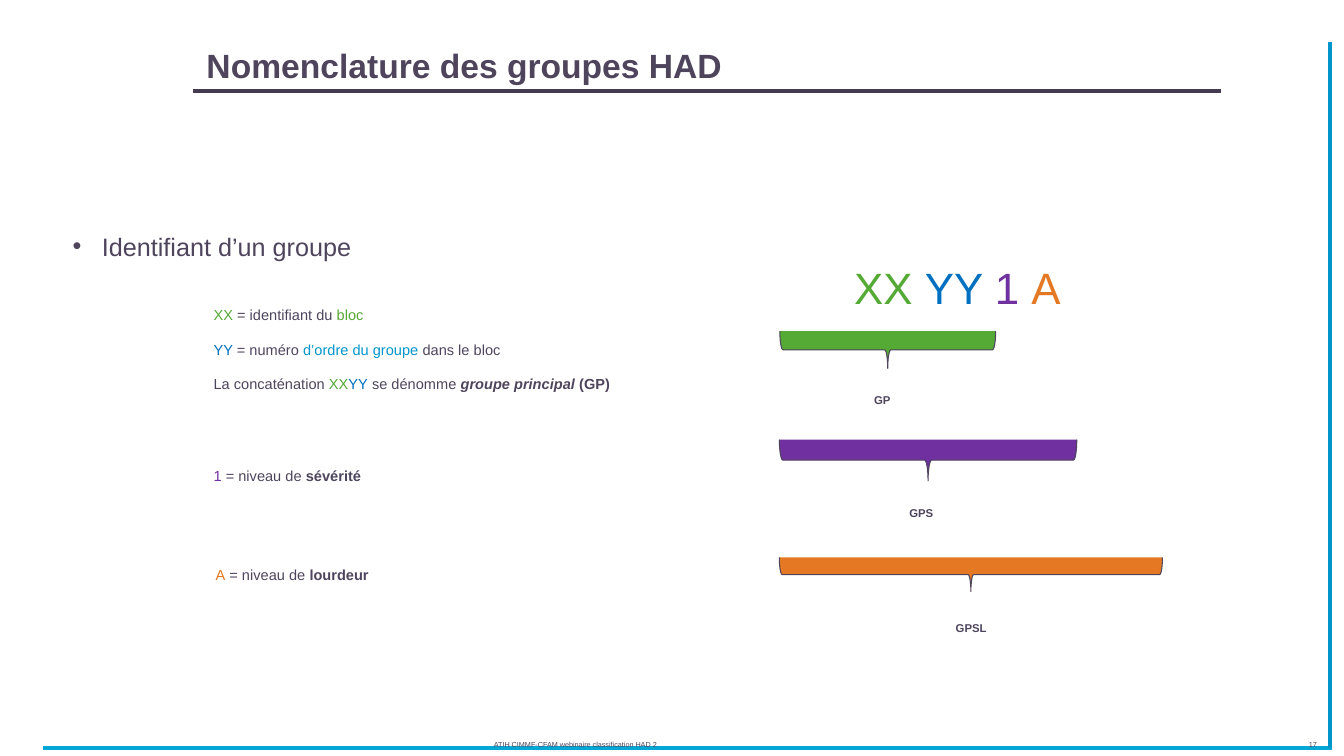
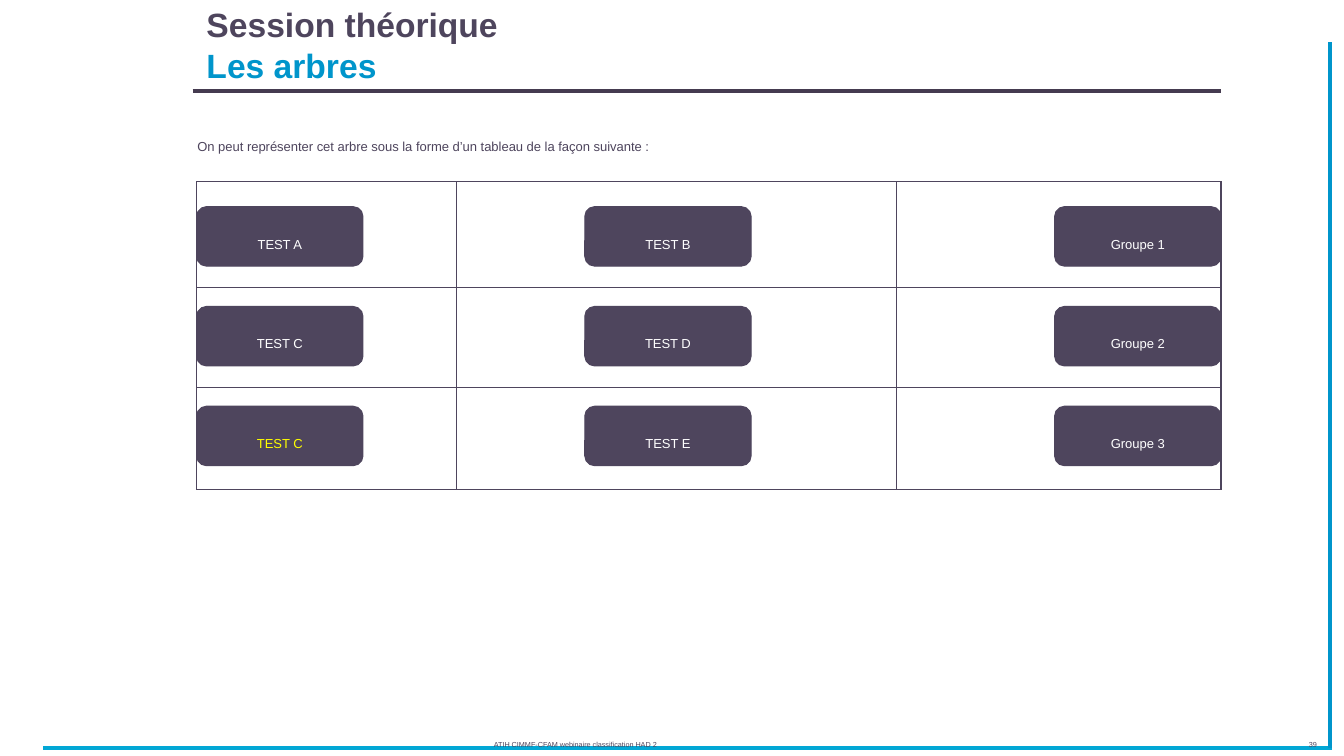
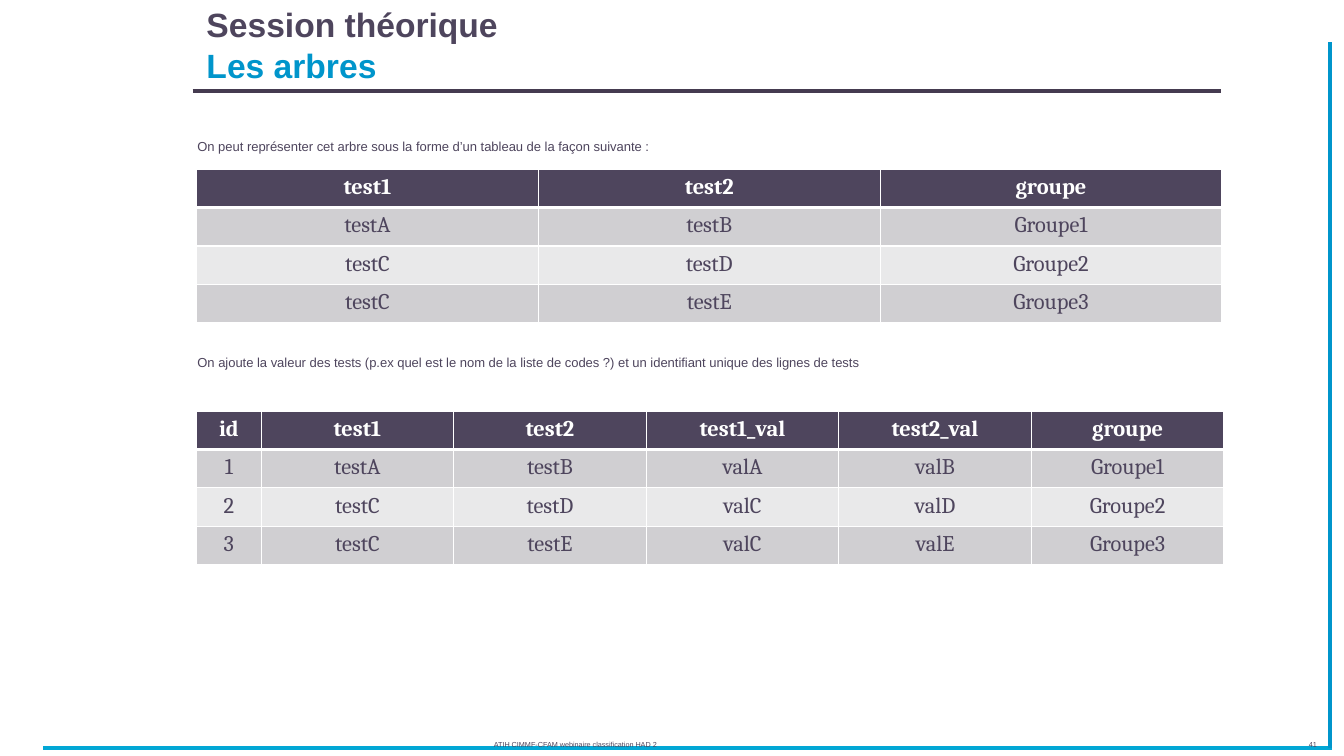
import pptx
import pptx.util
import pptx.dml.color
import pptx.enum.shapes
import pptx.enum.text
import pptx.oxml
import pptx.oxml.ns
import lxml.etree

Inches = pptx.util.Inches
Pt = pptx.util.Pt
RGB = pptx.dml.color.RGBColor.from_string
SHAPE = pptx.enum.shapes.MSO_SHAPE
ALIGN = pptx.enum.text.PP_ALIGN
ANCHOR = pptx.enum.text.MSO_ANCHOR
qn = pptx.oxml.ns.qn

COLORS = {
    "ink": "4E455D", "rule": "453B50", "sky": "02A7D5", "blue": "0095CB",
    "navy": "0070C0", "green": "55A935", "plum": "7030A0", "orange": "E47823",
    "white": "FFFFFF", "yellow": "FFFF00", "dark": "D0CFD2", "pale": "E9E9EA",
}


def write(frame, lines, size, face="Arial", low=True, align=ALIGN.LEFT,
          anchor=ANCHOR.TOP, inset=None, wrap=True):
    """Fill a frame with lines of (text, color, styles) runs; low sets subscript."""
    frame.word_wrap = wrap
    frame.vertical_anchor = anchor
    if inset is not None:
        for side in ("left", "top", "right", "bottom"):
            setattr(frame, "margin_" + side, Inches(inset))
    for i, runs in enumerate(lines):
        para = frame.paragraphs[0] if i == 0 else frame.add_paragraph()
        para.alignment = align
        for text, color, *styles in runs:
            run = para.add_run()
            run.text = text.rstrip("\n")
            form = {"name": face, "size": Pt(size), "bold": "bold" in styles,
                    "italic": "italic" in styles}
            for key, value in form.items():
                setattr(run.font, key, value)
            run.font.color.rgb = RGB(COLORS[color])
            if low:
                run.font._element.set("baseline", "-25000")
            if text.endswith("\n"):
                para.add_line_break()


def rule(slide, x1, y1, x2, y2, color="ink", width=0.75):
    line = slide.shapes.add_connector(
        pptx.enum.shapes.MSO_CONNECTOR.STRAIGHT,
        Inches(x1), Inches(y1), Inches(x2), Inches(y2))
    line.line.color.rgb = RGB(COLORS[color])
    line.line.width = Pt(width)
    lxml.etree.SubElement(line._element.spPr, qn("a:effectLst"))


deck = pptx.Presentation()
deck.slide_width, deck.slide_height = Inches(13.33), Inches(7.5)

# Shared frame: rules, title, footer and page number
tree = [("Session théorique\n", "ink", "bold"), ("Les arbres", "blue", "bold")]
pages = [
    ("17", [("Nomenclature des groupes HAD", "ink", "bold")]),
    ("39", tree),
    ("41", tree),
]
slides = []
for number, title in pages:
    slide = deck.slides.add_slide(deck.slide_layouts[6])
    slides.append(slide)
    rule(slide, 1.91, 0.9, 12.11, 0.9, "rule", 3.06)
    rule(slide, 0.43, 7.42, 13.21, 7.42, "sky", 3.06)
    rule(slide, 13.19, 7.42, 13.19, 0.42, "blue", 3.06)
    box = slide.shapes.add_textbox(Inches(1.95), Inches(0.08), Inches(10.17), Inches(0.81))
    write(box.text_frame, [title], 24, low=False, anchor=ANCHOR.BOTTOM)
    box = slide.shapes.add_textbox(Inches(4.8), Inches(7.21), Inches(5.31), Inches(0.2))
    write(box.text_frame, [[("ATIH CIMMF-CFAM webinaire classification HAD 2", "ink")]], 9)
    box = slide.shapes.add_textbox(Inches(12.38), Inches(7.21), Inches(0.78), Inches(0.19))
    write(box.text_frame, [[(number, "ink")]], 9, align=ALIGN.RIGHT)
names, grid, tables = slides

# Slide 1: parts of a group name
box = names.shapes.add_textbox(Inches(0.48), Inches(2.25), Inches(7), Inches(0.57))
props = box.text_frame.paragraphs[0]._p.get_or_add_pPr()
props.set("marL", str(Inches(0.49)))
props.set("indent", str(Inches(-0.29)))
lxml.etree.SubElement(props, qn("a:buFont")).set("typeface", "Arial")
lxml.etree.SubElement(props, qn("a:buChar")).set("char", "•")
write(box.text_frame, [[("Identifiant d’un groupe", "ink")]], 18, low=False, inset=0.04)

box = names.shapes.add_textbox(Inches(7.74), Inches(2.08), Inches(3.51), Inches(0.91))
code = [("XX ", "green"), ("YY ", "navy"), ("1 ", "plum"), ("A", "orange")]
write(box.text_frame, [code], 54, align=ALIGN.CENTER, inset=0, wrap=False)

notes = [
    (2.02, 2.82, 4.97, 0.81, [
        [("XX ", "green"), ("= identifiant du ", "ink"), ("bloc", "green")],
        [("YY ", "navy"), ("= numéro ", "ink"), ("d’ordre du groupe ", "blue"),
         ("dans le bloc", "ink")],
        [("La concaténation ", "ink"), ("XX", "green"), ("YY", "navy"),
         (" se dénomme ", "ink"), ("groupe principal", "ink", "bold", "italic"),
         (" (GP)", "ink", "bold")],
    ]),
    (2.02, 4.42, 4.78, 0.5, [
        [("1 ", "plum"), ("= niveau de ", "ink"), ("sévérité", "ink", "bold")]]),
    (2.04, 5.4, 3.02, 0.61, [
        [("A", "orange"), (" = niveau de ", "ink"), ("lourdeur", "ink", "bold")]]),
]
for *place, lines in notes:
    box = names.shapes.add_textbox(*map(Inches, place))
    write(box.text_frame, lines, 18)

braces = [
    (8.62, 2.4, 0.37, 2.14, "green", "GP", 8.57, 3.72, 0.59),
    (9, 3.09, 0.41, 2.95, "plum", "GPS", 8.92, 4.84, 1.16),
    (9.46, 3.8, 0.34, 3.8, "orange", "GPSL", 9.38, 5.98, 1.28),
]
for *place, color, label, left, top, width in braces:
    brace = names.shapes.add_shape(SHAPE.LEFT_BRACE, *map(Inches, place))
    brace.rotation = 270
    brace.shadow.inherit = False
    brace.fill.solid()
    brace.fill.fore_color.rgb = RGB(COLORS[color])
    brace.line.color.rgb = RGB(COLORS["ink"])
    brace.line.width = Pt(0.75)
    box = names.shapes.add_textbox(Inches(left), Inches(top), Inches(width), Inches(0.34))
    write(box.text_frame, [[(label, "ink", "bold")]], 14)

# Lead sentences of slides 2 and 3
lead = "On peut représenter cet arbre sous la forme d’un tableau de la façon suivante :"
more = ("On ajoute la valeur des tests (p.ex quel est le nom de la liste de codes ?) "
        "et un identifiant unique des lignes de tests")
for slide, text, top, width, height in [
        (grid, lead, 1.18, 8.1, 0.37),
        (tables, lead, 1.18, 8.1, 0.37),
        (tables, more, 3.32, 10.25, 0.64)]:
    box = slide.shapes.add_textbox(Inches(1.86), Inches(top), Inches(width), Inches(height))
    write(box.text_frame, [[(text, "ink")]], 16)

# Slide 2: tree as a grid of boxes
for y in (1.8, 2.85, 3.84, 4.86):
    rule(grid, 1.95, y, 12.11, y)
for x in (1.95, 4.53, 8.89, 12.11):
    rule(grid, x, 1.8, x, 4.86)
tests = [
    ("TEST A", "TEST B", "Groupe 1"),
    ("TEST C", "TEST D", "Groupe 2"),
    ("TEST C", "TEST E", "Groupe 3"),
]
for i, row in enumerate(tests):
    for j, (x, text) in enumerate(zip((1.95, 5.8, 10.46), row)):
        card = grid.shapes.add_shape(
            SHAPE.ROUNDED_RECTANGLE, Inches(x), Inches(2.05 + 0.99 * i),
            Inches(1.65), Inches(0.59))
        card.shadow.inherit = False
        card.fill.solid()
        card.fill.fore_color.rgb = RGB(COLORS["ink"])
        card.line.color.rgb = RGB(COLORS["ink"])
        card.line.width = Pt(0.75)
        color = "yellow" if (i, j) == (2, 0) else "white"
        write(card.text_frame, [[(text, color)]], 16, align=ALIGN.CENTER,
              anchor=ANCHOR.MIDDLE, inset=0)

# Slide 3: tree as two tables
short = [
    ("test1", "test2", "groupe"),
    ("testA", "testB", "Groupe1"),
    ("testC", "testD", "Groupe2"),
    ("testC", "testE", "Groupe3"),
]
full = [
    ("id", "test1", "test2", "test1_val", "test2_val", "groupe"),
    ("1", "testA", "testB", "valA", "valB", "Groupe1"),
    ("2", "testC", "testD", "valC", "valD", "Groupe2"),
    ("3", "testC", "testE", "valC", "valE", "Groupe3"),
]
fills = ("ink", "dark", "pale", "dark")
for rows, top, widths in [(short, 1.68, [3.39] * 3), (full, 4.08, [0.64] + [1.91] * 5)]:
    table = tables.shapes.add_table(
        len(rows), len(widths), Inches(1.95), Inches(top),
        Inches(sum(widths)), Inches(0.38 * len(rows))).table
    table.horz_banding = False
    for column, width in zip(table.columns, widths):
        column.width = Inches(width)
    for i, row in enumerate(rows):
        table.rows[i].height = Inches(0.38)
        for j, text in enumerate(row):
            cell = table.cell(i, j)
            run = (text, "white", "bold") if i == 0 else (text, "ink")
            write(cell.text_frame, [[run]], 16, "Cambria", low=False, align=ALIGN.CENTER)
            props = cell._tc.get_or_add_tcPr()
            for side in ("L", "R", "T", "B"):
                thick = (i, side) in ((0, "B"), (1, "T"))
                edge = lxml.etree.SubElement(props, qn("a:ln" + side))
                edge.set("w", str(Pt(3 if thick else 1)))
                paint = lxml.etree.SubElement(edge, qn("a:solidFill"))
                lxml.etree.SubElement(paint, qn("a:srgbClr")).set("val", COLORS["white"])
            cell.fill.solid()
            cell.fill.fore_color.rgb = RGB(COLORS[fills[i]])

deck.save("out.pptx")
